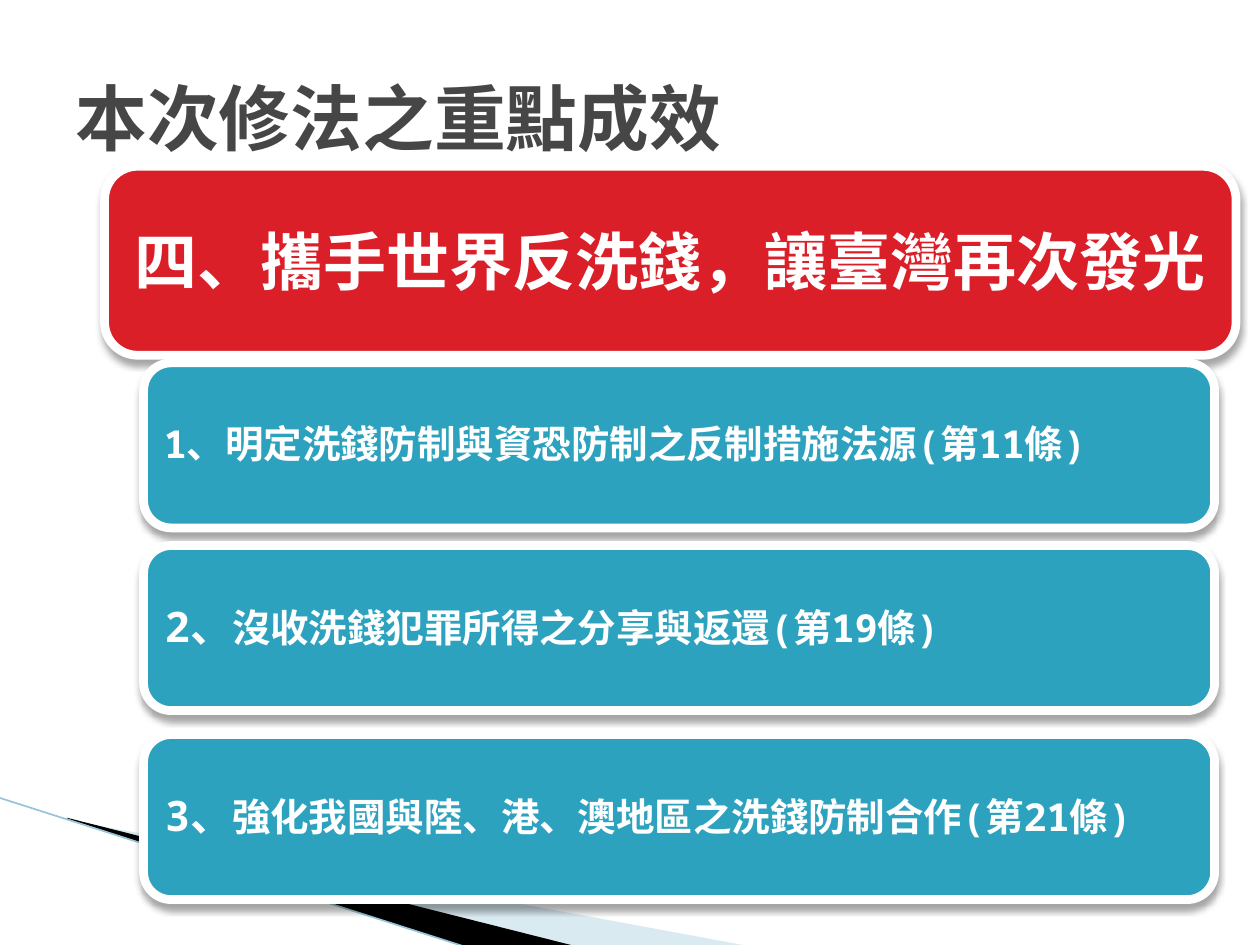
from dataclasses import dataclass

from lxml.etree import SubElement
from pptx import Presentation
from pptx.dml.color import RGBColor
from pptx.enum.shapes import MSO_CONNECTOR as Connector, MSO_SHAPE as Preset
from pptx.enum.text import MSO_ANCHOR as Anchor, PP_ALIGN as Align
from pptx.oxml.ns import qn
from pptx.util import Emu, Pt

PX = 9144
FONT = "Noto Sans Mono"
WHITE, RED, TEAL, GREY = "FFFFFF", "DA1F28", "2DA2BF", "464646"


@dataclass(frozen=True)
class Box:
    left: int
    top: int
    width: int
    height: int

    def emu(self) -> list[Emu]:
        """Return the four lengths in EMU."""
        return [px(n) for n in (self.left, self.top, self.width, self.height)]


@dataclass(frozen=True)
class Phrase:
    text: str
    size: int


@dataclass(frozen=True)
class Measure:
    top: int
    margin: int
    phrases: tuple[Phrase, ...]


@dataclass(frozen=True)
class Wedge:
    points: tuple[tuple[int, int], ...]
    color: str
    opacity: int


WEDGES = (
    Wedge(((55, 651), (595, 751), (456, 751), (55, 650)), "A0CBDC", 40),
    Wedge(((53, 649), (457, 751), (372, 752), (54, 650)), "000000", 100),
)
MEASURES = (
    Measure(288, 9, (Phrase("1、明定洗錢防制與資恐防制之反制措施法源(第11條)", 22),)),
    Measure(433, 10, (Phrase("2、", 24), Phrase("沒收洗錢犯罪所得之分享與返還(第19條)", 22))),
    Measure(583, 10, (Phrase("3、", 24), Phrase("強化我國與陸、港、澳地區之洗錢防制合作(第21條)", 22))),
)


def px(length: int) -> Emu:
    """Turn px into EMU."""
    return Emu(length * PX)


def rgb(color: str) -> RGBColor:
    """Turn a hex string into a colour."""
    return RGBColor.from_string(color)


def apply(target, values: dict) -> None:
    """Set each attribute named in the format values."""
    for name, value in values.items():
        setattr(target, name, value)


def set_opacity(color, percent: int) -> None:
    """Give a colour element an alpha value."""
    SubElement(color, qn("a:alpha")).set("val", str(percent * 1000))


def write(frame, phrases: tuple[Phrase, ...], color: str, **layout) -> None:
    """Fill a text frame with one paragraph of bold phrases."""
    apply(frame, {"word_wrap": True, "vertical_anchor": Anchor.MIDDLE})
    paragraph = frame.paragraphs[0]
    apply(paragraph, layout)
    for phrase in phrases:
        run = paragraph.add_run()
        run.text = phrase.text
        apply(run.font, {"name": FONT, "size": Pt(phrase.size), "bold": True})
        run.font.color.rgb = rgb(color)
        SubElement(run.font._element, qn("a:ea")).set("typeface", FONT)


def draw_wedge(shapes, wedge: Wedge) -> None:
    """Draw one corner wedge."""
    builder = shapes.build_freeform(*wedge.points[0], scale=PX)
    builder.add_line_segments(wedge.points[1:], close=True)
    shape = builder.convert_to_shape()
    shape.shadow.inherit = False
    shape.fill.solid()
    shape.fill.fore_color.rgb = rgb(wedge.color)
    shape.line.fill.background()
    if wedge.opacity < 100:
        set_opacity(shape._element.spPr.find(".//" + qn("a:srgbClr")), wedge.opacity)


def draw_edge(shapes) -> None:
    """Draw the thin line along the corner wedges."""
    edge = shapes.add_connector(Connector.STRAIGHT, px(-1), px(633), px(371), px(752))
    edge.line.color.rgb = rgb("97C5D8")
    edge.line.width = Pt(0.95)
    SubElement(edge._element.spPr, qn("a:effectLst"))


def draw_card(shapes, box: Box, color: str, rounding: float):
    """Draw a rounded card with a white border and a soft shadow."""
    card = shapes.add_shape(Preset.ROUNDED_RECTANGLE, *box.emu())
    card.adjustments[0] = rounding
    card.fill.solid()
    card.fill.fore_color.rgb = rgb(color)
    card.line.color.rgb = rgb(WHITE)
    card.line.width = Pt(5)
    card.shadow.inherit = False
    effects = card._element.spPr.find(qn("a:effectLst"))
    shadow = SubElement(effects, qn("a:outerShdw"), blurRad=str(Pt(4)),
                        dist=str(Pt(3)), dir="5400000", rotWithShape="0")
    set_opacity(SubElement(shadow, qn("a:srgbClr"), val="000000"), 35)
    return card


def draw_measure(shapes, measure: Measure) -> None:
    """Draw one measure card and its text."""
    draw_card(shapes, Box(114, measure.top, 850, 131), TEAL, 0.1667)
    label = shapes.add_textbox(*Box(121, measure.top + 7, 838, 118).emu())
    sides = ("left", "top", "right", "bottom")
    apply(label.text_frame, {f"margin_{side}": px(measure.margin) for side in sides})
    write(label.text_frame, measure.phrases, WHITE, line_spacing=0.9)


def main() -> None:
    """Build the slide and save it."""
    deck = Presentation()
    apply(deck, {"slide_width": px(1000), "slide_height": px(750)})
    shapes = deck.slides.add_slide(deck.slide_layouts[6]).shapes
    for wedge in WEDGES:
        draw_wedge(shapes, wedge)
    draw_edge(shapes)
    title = shapes.add_textbox(*Box(50, 30, 900, 125).emu())
    write(title.text_frame, (Phrase("本次修法之重點成效", 41),), GREY)
    heading = draw_card(shapes, Box(83, 132, 898, 150), RED, 0.175)
    write(heading.text_frame, (Phrase("四、攜手世界反洗錢，讓臺灣再次發光", 36),),
          WHITE, alignment=Align.CENTER)
    for measure in MEASURES:
        draw_measure(shapes, measure)
    deck.save("out.pptx")


if __name__ == "__main__":
    main()
